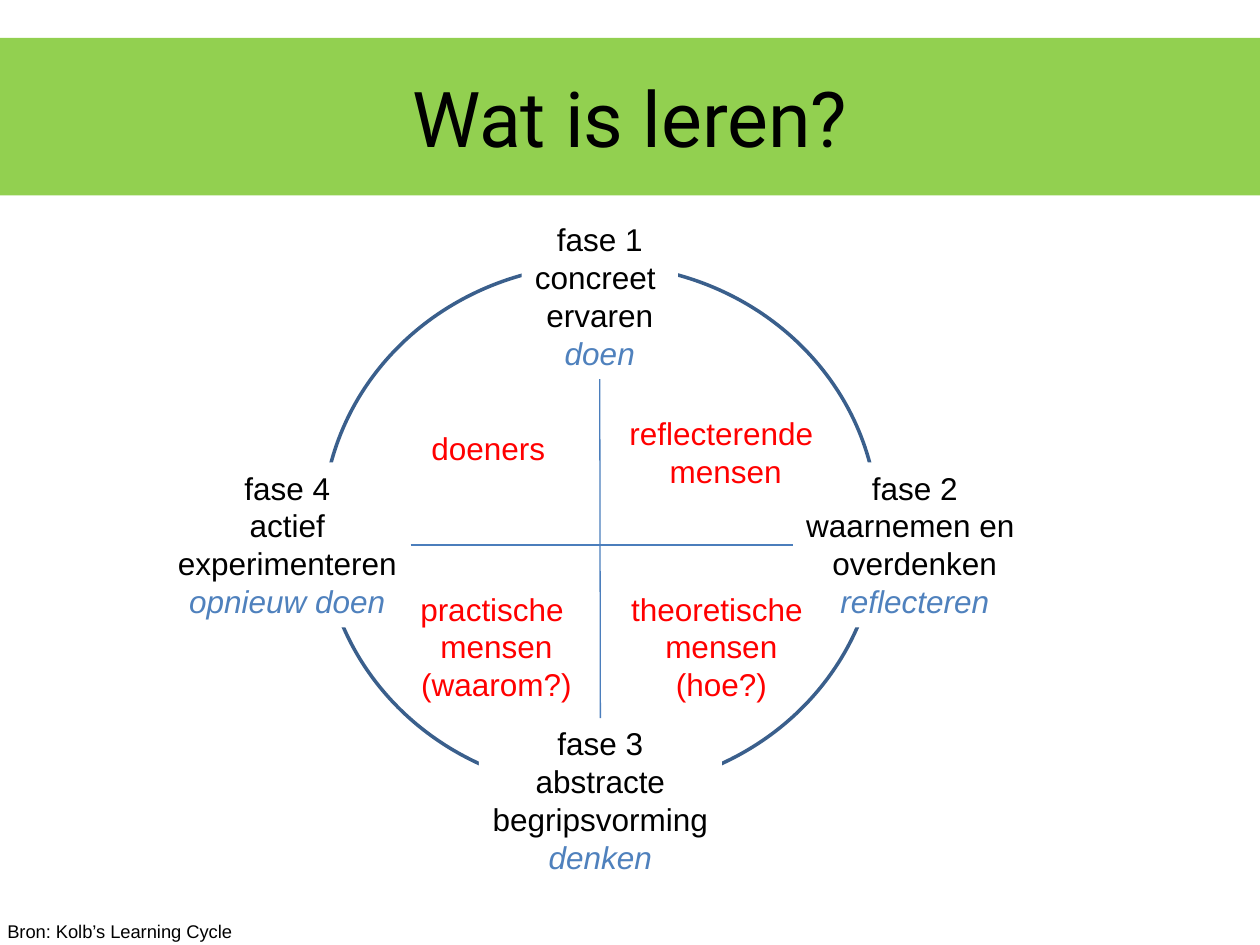
from pptx import Presentation
from pptx.dml.color import RGBColor
from pptx.enum.shapes import MSO_CONNECTOR, MSO_SHAPE
from pptx.enum.text import MSO_ANCHOR, MSO_AUTO_SIZE, PP_ALIGN
from pptx.oxml import parse_xml
from pptx.oxml.ns import nsdecls
from pptx.util import Pt

STRAIGHT = MSO_CONNECTOR.STRAIGHT
RECTANGLE, OVAL = MSO_SHAPE.RECTANGLE, MSO_SHAPE.OVAL
MIDDLE = MSO_ANCHOR.MIDDLE
GROW = MSO_AUTO_SIZE.SHAPE_TO_FIT_TEXT
LEFT, CENTER = PP_ALIGN.LEFT, PP_ALIGN.CENTER
TOP_SIDE, LEFT_SIDE, BOTTOM_SIDE, RIGHT_SIDE = range(4)

GREEN = RGBColor(0x92, 0xD0, 0x50)
WHITE = RGBColor(0xFF, 0xFF, 0xFF)
BLACK = RGBColor(0x00, 0x00, 0x00)
RED = RGBColor(0xFF, 0x00, 0x00)
BLUE = RGBColor(0x4F, 0x81, 0xBD)
RING_BLUE = RGBColor(0x3A, 0x5F, 0x8C)
AXIS_BLUE = RGBColor(0x4B, 0x7E, 0xBC)

SCALE = 9144  # EMU per px, 100 px to the inch

# Phase boxes, relative to the cycle: left, top, width, lines, keyword
PHASES = [
    (284, 0, 124, ["fase 1", "concreet ", "ervaren"], "doen"),
    (250, 400, 193, ["fase 3", "abstracte", "begripsvorming"], "denken"),
    (499, 197, 194, ["fase 2", "waarnemen en ", "overdenken"], "reflecteren"),
    (0, 197, 196, ["fase 4", "actief", "experimenteren"], "opnieuw doen"),
]
PHASE_HEIGHT = 131

# Learner types, relative to the cycle: left, top, width, height, text
LEARNERS = [
    (202, 166, 111, 40, "doeners"),
    (359, 154, 174, 71, "reflecterende \nmensen"),
    (360, 293, 165, 101, "theoretische \nmensen\n(hoe?)"),
    (193, 293, 142, 101, "practische \nmensen\n(waarom?)"),
]


def px(*lengths):
    return [length * SCALE for length in lengths]


def style(para, size, color, font="Arial", align=CENTER):
    para.alignment = align
    para.font.name = font
    para.font.size = Pt(size)
    para.font.color.rgb = color


def add_label(page, box, paragraphs, size, color, align=CENTER):
    label = page.shapes.add_textbox(*px(*box))
    frame = label.text_frame
    frame.word_wrap = False
    frame.auto_size = GROW
    for index, text in enumerate(paragraphs):
        para = frame.add_paragraph() if index else frame.paragraphs[0]
        para.text = text
        style(para, size, color, align=align)
    return label


def add_title(page, box, text):
    banner = page.shapes.add_shape(RECTANGLE, *px(*box))
    banner.shadow.inherit = False
    banner.fill.solid()
    banner.fill.fore_color.rgb = GREEN
    banner.line.fill.background()
    banner.text_frame.vertical_anchor = MIDDLE
    para = banner.text_frame.paragraphs[0]
    para.text = text
    style(para, 44, BLACK, font="Roboto")


def add_phase(page, box, lines, keyword):
    phase = add_label(page, box, lines, 18, BLACK)
    phase.fill.solid()
    phase.fill.fore_color.rgb = WHITE
    # Keyword on a new line of the last paragraph
    para = phase.text_frame.paragraphs[-1]
    para.add_line_break()
    span = para.add_run()
    span.text = keyword
    span.font.italic = True
    span.font.color.rgb = BLUE
    return phase


def add_axis(page, start, start_side, end, end_side):
    axis = page.shapes.add_connector(STRAIGHT, 0, 0, 0, 0)
    axis.begin_connect(start, start_side)
    axis.end_connect(end, end_side)
    axis.line.color.rgb = AXIS_BLUE
    axis.line.width = Pt(0.75)
    axis._element.spPr.append(parse_xml(f"<a:effectLst {nsdecls('a')}/>"))


def add_cycle(page, left, top):
    # Ring behind the phases
    ring = page.shapes.add_shape(OVAL, *px(left + 126, top + 40, 441, 417))
    ring.shadow.inherit = False
    ring.fill.background()
    ring.line.color.rgb = RING_BLUE
    ring.line.width = Pt(2)

    # Phases interrupt the ring
    upper, lower, right, left_phase = [
        add_phase(page, (left + x, top + y, width, PHASE_HEIGHT), lines, keyword)
        for x, y, width, lines, keyword in PHASES
    ]

    # Axes between opposite phases
    add_axis(page, upper, BOTTOM_SIDE, lower, TOP_SIDE)
    add_axis(page, left_phase, RIGHT_SIDE, right, LEFT_SIDE)

    # Learner type in each quadrant
    for x, y, width, height, text in LEARNERS:
        add_label(page, (left + x, top + y, width, height), [text], 18, RED)


def main():
    deck = Presentation()
    deck.slide_width, deck.slide_height = px(1000, 750)
    page = deck.slides.add_slide(deck.slide_layouts[6])
    add_title(page, (0, 30, 1000, 125), "Wat is leren?")
    add_label(page, (-4, 725, 203, 28), ["Bron: Kolb’s Learning Cycle"],
              10.5, BLACK, LEFT)
    add_cycle(page, 130, 170)
    deck.save("out.pptx")


if __name__ == "__main__":
    main()
